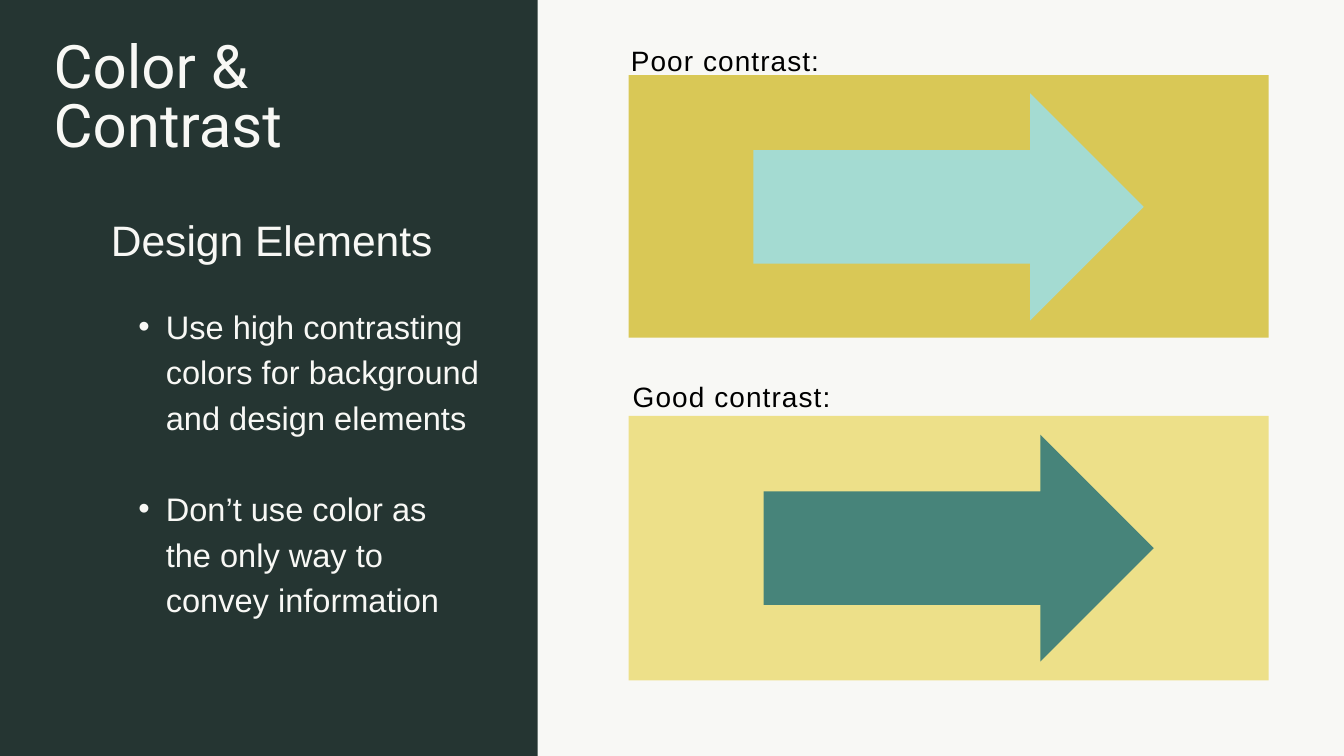
"""Build the Color & Contrast slide with one poor and one good example."""
from dataclasses import dataclass

from lxml import etree
from pptx import Presentation
from pptx import util as u
from pptx.dml.color import RGBColor
from pptx.enum import shapes, text
from pptx.oxml.ns import qn

DARK, LIGHT, BLACK = "253532", "F8F8F5", "000000"
BOX_LEFT, BOX_WIDTH = 23.76, 24.19
ARROW_WIDTH, ARROW_HEIGHT = 14.75, 8.58
LABEL_HEIGHT = 1.42
BULLET_INDENT, BULLET_HANG = 2.08, 1.04


@dataclass
class Example:
    label: str
    label_left: float
    label_top: float
    label_width: float
    box_top: float
    box_height: float
    box_color: str
    arrow_left: float
    arrow_top: float
    arrow_color: str


EXAMPLES = [
    Example("Poor contrast:", 23.75, 1.42, 7.32, 2.84, 9.93, "D9C856",
            28.48, 3.53, "A4DBD2"),
    Example("Good contrast:", 23.57, 14.12, 8.18, 15.72, 10, "EDE089",
            28.86, 16.43, "47847A"),
]
TIPS = [
    "Use high contrasting colors for background and design elements",
    "Don’t use color as the only way to convey information",
]


def set_fill(fill, color: str) -> None:
    fill.solid()
    fill.fore_color.rgb = RGBColor.from_string(color)


def add_block(s, kind, left: float, top: float, width: float, height: float,
              color: str) -> None:
    sp = s.shapes.add_shape(kind, u.Cm(left), u.Cm(top), u.Cm(width), u.Cm(height))
    sp.shadow.inherit = False
    set_fill(sp.fill, color)
    sp.line.fill.background()


def add_bullet(p) -> None:
    pPr = p._p.get_or_add_pPr()
    pPr.set("marL", str(u.Cm(BULLET_INDENT)))
    pPr.set("indent", str(-u.Cm(BULLET_HANG)))
    etree.SubElement(pPr, qn("a:buFont"), typeface="Arial")
    etree.SubElement(pPr, qn("a:buChar"), char="•")


def add_text(s, paragraphs: list[str], left: float, top: float, width: float,
             height: float, *, size: float, leading: float, font: str = "Arial",
             color: str = LIGHT, align=text.PP_ALIGN.LEFT, tracking: float = 0,
             gap: float = 0, bullets: bool = False) -> None:
    tf = s.shapes.add_textbox(u.Cm(left), u.Cm(top), u.Cm(width), u.Cm(height)).text_frame
    tf.word_wrap = True
    tf.margin_left = tf.margin_top = tf.margin_right = tf.margin_bottom = 0
    for i, content in enumerate(paragraphs):
        p = tf.add_paragraph() if i else tf.paragraphs[0]
        p.alignment = align
        p.line_spacing = u.Pt(leading)
        if i:
            p.space_before = u.Pt(gap)
        if bullets:
            add_bullet(p)
        r = p.add_run()
        r.text = content
        r.font.name = font
        r.font.size = u.Pt(size)
        r.font.color.rgb = RGBColor.from_string(color)
        if tracking:
            r._r.get_or_add_rPr().set("spc", str(round(tracking * 100)))


def add_example(s, ex: Example) -> None:
    add_block(s, shapes.MSO_SHAPE.RECTANGLE, BOX_LEFT, ex.box_top,
              BOX_WIDTH, ex.box_height, ex.box_color)
    add_block(s, shapes.MSO_SHAPE.RIGHT_ARROW, ex.arrow_left, ex.arrow_top,
              ARROW_WIDTH, ARROW_HEIGHT, ex.arrow_color)
    add_text(s, [ex.label], ex.label_left, ex.label_top, ex.label_width, LABEL_HEIGHT,
             size=30, leading=42, color=BLACK, align=text.PP_ALIGN.CENTER, tracking=1.2)


def main() -> None:
    prs = Presentation()
    prs.slide_width, prs.slide_height = u.Cm(50.8), u.Cm(28.58)
    s = prs.slides.add_slide(prs.slide_layouts[6])
    set_fill(s.background.fill, LIGHT)
    add_block(s, shapes.MSO_SHAPE.RECTANGLE, 0, 0, 20.32, 28.58, DARK)
    add_text(s, ["Color & Contrast"], 2.03, 1.55, 14.66, 5.05,
             size=64.3, leading=63.7, font="Roboto")
    add_text(s, ["Design Elements"], 4.19, 7.77, 17.09, 2.34, size=45.6, leading=63.8)
    add_text(s, TIPS, 4.19, 11.35, 13.97, 13.54,
             size=34.9, leading=48.8, gap=48.8, bullets=True)
    for ex in EXAMPLES:
        add_example(s, ex)
    prs.save("out.pptx")


if __name__ == "__main__":
    main()
